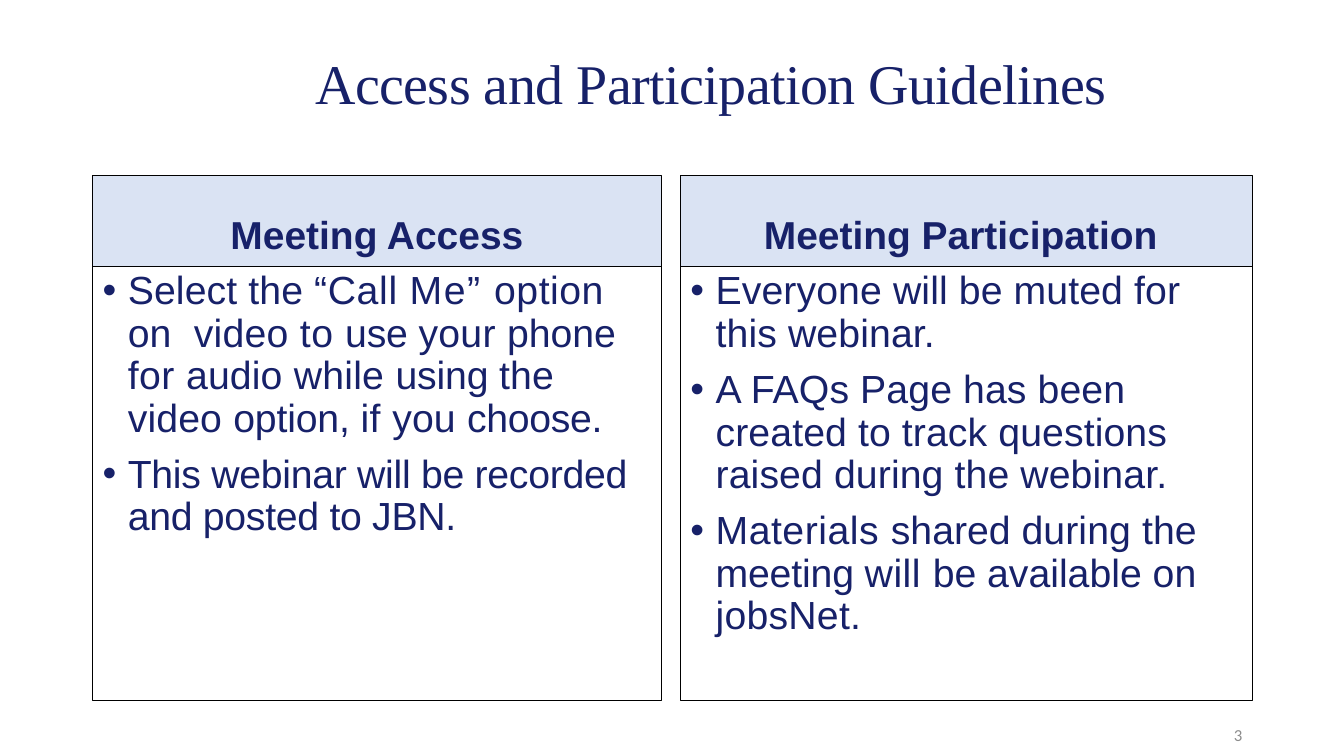
"""Build the Access and Participation Guidelines slide."""
from dataclasses import dataclass

from lxml import etree
from pptx import Presentation
from pptx import util as u
from pptx.dml.color import RGBColor
from pptx.enum import shapes, text
from pptx.oxml import ns

NAVY = RGBColor(0x17, 0x21, 0x69)
PALE_BLUE = RGBColor(0xDA, 0xE3, 0xF3)
BLACK = RGBColor(0, 0, 0)
GREY = RGBColor(0x8C, 0x8C, 0x8C)

TITLE_FONT = {"name": "Times New Roman", "size": u.Pt(40)}
HEADING_FONT = {"name": "Arial", "size": u.Pt(27.8), "bold": True}
BULLET_FONT = {"name": "Arial", "size": u.Pt(28)}
NUMBER_FONT = {"name": "Calibri", "size": u.Pt(12)}

PANEL_TOP = 1.74
HEADING_HEIGHT = 0.9
BODY_HEIGHT = 4.31
BULLET_INDENT = 0.25


@dataclass(frozen=True)
class Span:
    """Words that share one letter spacing in points."""
    words: str
    spacing: float = 0


@dataclass(frozen=True)
class Box:
    """A rectangle in inches."""
    left: float
    top: float
    width: float
    height: float

    def lengths(self) -> list:
        """Return the four lengths in slide units."""
        return [u.Inches(value) for value in (self.left, self.top, self.width, self.height)]


@dataclass(frozen=True)
class Panel:
    """A headed column of bullets."""
    left: float
    width: float
    heading: str
    bullets: list[list[Span]]


PANELS = [
    Panel(0.92, 5.64, "Meeting Access", [
        [Span("Select the “", 0.1), Span("Call ", 0.5), Span("Me” ", 1.1),
         Span("option ", 0.4), Span("on  ", 0.1), Span("video ", 0.2), Span("to ", 0.4),
         Span("use ", -0.1), Span("your ", 0.2), Span("phone "), Span("for ", 0.3),
         Span("audio ", 0.1), Span("while ", 0.2), Span("using ", -0.1),
         Span("the video ", 0.1), Span("option, ", -0.1), Span("if ", 0.3),
         Span("you ", 0.1), Span("choose.", -0.2)],
        [Span("This webinar will be recorded and posted to JBN.", -0.2)],
    ]),
    Panel(6.75, 5.67, "Meeting Participation ", [
        [Span("Everyone will be muted for this webinar.", 0.1)],
        [Span("A FAQs Page has been created to track questions raised during the webinar.", 0.1)],
        [Span("Materials ", 0.4), Span("shared "), Span("during the ", 0.1),
         Span("meeting ", -0.1), Span("will ", 0.4), Span("be available "),
         Span("on ", 0.1), Span("jobsNet.", 0.2)],
    ]),
]


def apply_format(target: object, values: dict) -> None:
    """Set each named attribute on the target."""
    for name, value in values.items():
        setattr(target, name, value)


def add_spans(paragraph, spans: list[Span], font: dict, color: RGBColor) -> None:
    """Add formatted runs to a paragraph."""
    for span in spans:
        run = paragraph.add_run()
        run.text = span.words
        apply_format(run.font, font)
        run.font.color.rgb = color
        if span.spacing:
            run._r.get_or_add_rPr().set("spc", str(round(span.spacing * 100)))


def add_line(slide, box: Box, spans: list[Span], font: dict, color: RGBColor, layout: dict) -> None:
    """Add a one-line text box."""
    frame = slide.shapes.add_textbox(*box.lengths()).text_frame
    apply_format(frame, {"word_wrap": True, "vertical_anchor": text.MSO_ANCHOR.MIDDLE})
    apply_format(frame.paragraphs[0], layout)
    add_spans(frame.paragraphs[0], spans, font, color)


def add_rectangle(slide, box: Box, frame_format: dict, fill: RGBColor | None = None):
    """Add an outlined rectangle and return its text frame."""
    shape = slide.shapes.add_shape(shapes.MSO_SHAPE.RECTANGLE, *box.lengths())
    shape.shadow.inherit = False
    if fill is None:
        shape.fill.background()
    else:
        shape.fill.solid()
        shape.fill.fore_color.rgb = fill
    shape.line.color.rgb = BLACK
    shape.line.width = u.Pt(0.75)
    apply_format(shape.text_frame, {"word_wrap": True, **frame_format})
    return shape.text_frame


def add_bullet(paragraph) -> None:
    """Give a paragraph a hanging bullet."""
    properties = paragraph._p.get_or_add_pPr()
    indent = u.Inches(BULLET_INDENT)
    properties.set("marL", str(indent))
    properties.set("indent", str(-indent))
    font = etree.SubElement(properties, ns.qn("a:buFont"))
    font.set("typeface", "Arial")
    etree.SubElement(properties, ns.qn("a:buChar")).set("char", "•")


def add_panel(slide, panel: Panel) -> None:
    """Draw a heading bar and its bullet box."""
    heading_box = Box(panel.left, PANEL_TOP, panel.width, HEADING_HEIGHT)
    heading_format = {"vertical_anchor": text.MSO_ANCHOR.BOTTOM, "margin_bottom": u.Inches(0.1)}
    heading = add_rectangle(slide, heading_box, heading_format, PALE_BLUE).paragraphs[0]
    apply_format(heading, {"alignment": text.PP_ALIGN.CENTER, "line_spacing": 0.7})
    add_spans(heading, [Span(panel.heading)], HEADING_FONT, NAVY)

    body_box = Box(panel.left, PANEL_TOP + HEADING_HEIGHT, panel.width, BODY_HEIGHT)
    frame = add_rectangle(slide, body_box, {"vertical_anchor": text.MSO_ANCHOR.TOP})
    for index, spans in enumerate(panel.bullets):
        paragraph = frame.add_paragraph() if index else frame.paragraphs[0]
        add_bullet(paragraph)
        apply_format(paragraph, {"alignment": text.PP_ALIGN.LEFT, "line_spacing": 0.9})
        if index:
            paragraph.space_before = u.Pt(10)
        add_spans(paragraph, spans, BULLET_FONT, NAVY)


def main() -> None:
    """Create and save the presentation."""
    presentation = Presentation()
    apply_format(presentation, {"slide_width": u.Inches(13.33), "slide_height": u.Inches(7.5)})
    slide = presentation.slides.add_slide(presentation.slide_layouts[6])
    add_line(slide, Box(2.95, 0.55, 8.33, 0.61),
             [Span("Access and Participation Guidelines ", -0.4)], TITLE_FONT, NAVY,
             {"alignment": text.PP_ALIGN.CENTER, "line_spacing": 0.9})
    for panel in PANELS:
        add_panel(slide, panel)
    add_line(slide, Box(9.42, 7.09, 3, 0.4), [Span("3")], NUMBER_FONT, GREY,
             {"alignment": text.PP_ALIGN.RIGHT})
    presentation.save("out.pptx")


if __name__ == "__main__":
    main()
